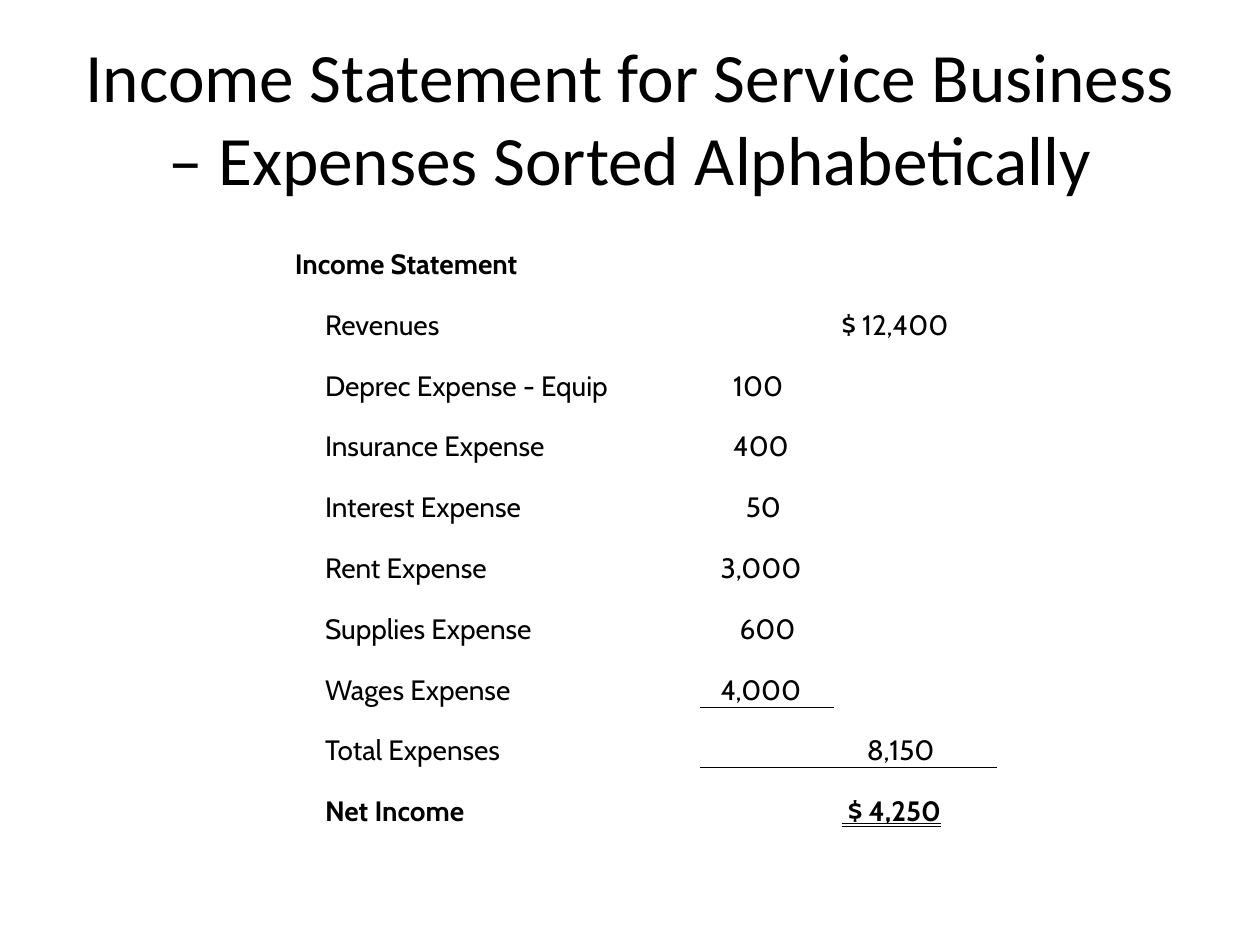
from dataclasses import dataclass

import lxml.etree
import pptx
import pptx.dml.color
import pptx.enum.text
import pptx.oxml.ns
import pptx.table
import pptx.util

COLORS = {"ink": "000000"}
SLIDE_WIDTH = pptx.util.Inches(10)
SLIDE_HEIGHT = pptx.util.Inches(7.5)
COLUMN_WIDTHS = (0.24, 2.99, 1.06, 1.29)
ROW_HEIGHT = 0.483
INSET = 0.01
INDENT_STEP = 0.05
HEADING, LABEL, DETAIL, TOTAL = range(4)
NO_STYLE = "{2D5ABB26-0587-4C30-8999-92F81FD0307C}"


@dataclass(frozen=True)
class Entry:
    label: str
    amount: str = ""
    column: int = DETAIL
    indent: int = 0
    label_column: int = LABEL
    bold: bool = False
    ruled: bool = False
    double_underline: bool = False


ENTRIES = (
    Entry("Income Statement", label_column=HEADING, bold=True),
    Entry("Revenues", "$ 12,400", TOTAL, 1),
    Entry("Deprec Expense - Equip", "100", indent=5),
    Entry("Insurance Expense", "400", indent=5),
    Entry("Interest Expense", "50", indent=7),
    Entry("Rent Expense", "3,000", indent=3),
    Entry("Supplies Expense", "600", indent=6),
    Entry("Wages Expense", "4,000", indent=3, ruled=True),
    Entry("Total Expenses", "8,150", TOTAL, 5, ruled=True),
    Entry("Net Income", " $ 4,250", TOTAL, 1, bold=True, double_underline=True),
)


def set_font(paragraph, name: str, size: float, bold: bool = False) -> None:
    paragraph.font.name = name
    paragraph.font.size = pptx.util.Pt(size)
    paragraph.font.bold = bold
    paragraph.font.color.rgb = pptx.dml.color.RGBColor.from_string(COLORS["ink"])


def write_cell(cell: pptx.table._Cell, text: str, bold: bool, indent: int = 0) -> None:
    cell.text = text
    cell.vertical_anchor = pptx.enum.text.MSO_ANCHOR.BOTTOM
    cell.margin_left = pptx.util.Inches(INSET + indent * INDENT_STEP)
    cell.margin_right = cell.margin_top = pptx.util.Inches(INSET)
    cell.margin_bottom = 0
    set_font(cell.text_frame.paragraphs[0], "Cabin", 16, bold)


def draw_border(cell: pptx.table._Cell, side: str) -> None:
    qn = pptx.oxml.ns.qn
    line = lxml.etree.Element(qn(f"a:{side}"), w=str(pptx.util.Pt(0.5)))
    fill = lxml.etree.SubElement(line, qn("a:solidFill"))
    lxml.etree.SubElement(fill, qn("a:srgbClr"), val=COLORS["ink"])
    cell._tc.get_or_add_tcPr().insert(0, line)


def add_title(slide) -> None:
    title = slide.shapes.add_textbox(
        int(SLIDE_WIDTH * 0.05), int(SLIDE_HEIGHT * 0.04),
        int(SLIDE_WIDTH * 0.9), pptx.util.Inches(1.25),
    )
    frame = title.text_frame
    frame.word_wrap = True
    frame.vertical_anchor = pptx.enum.text.MSO_ANCHOR.MIDDLE
    frame.text = "Income Statement for Service Business – Expenses Sorted Alphabetically"
    paragraph = frame.paragraphs[0]
    paragraph.alignment = pptx.enum.text.PP_ALIGN.CENTER
    set_font(paragraph, "Calibri", 39.6)


def add_statement(slide) -> None:
    table = slide.shapes.add_table(
        len(ENTRIES), len(COLUMN_WIDTHS),
        int(SLIDE_WIDTH * 0.233), pptx.util.Inches(1.75),
        pptx.util.Inches(sum(COLUMN_WIDTHS)),
        pptx.util.Inches(ROW_HEIGHT * len(ENTRIES)),
    ).table
    table.first_row = table.horz_banding = False
    table._tbl.tblPr.find(pptx.oxml.ns.qn("a:tableStyleId")).text = NO_STYLE
    for column, width in zip(table.columns, COLUMN_WIDTHS):
        column.width = pptx.util.Inches(width)
    for row in table.rows:
        row.height = pptx.util.Inches(ROW_HEIGHT)
    for cell in table.iter_cells():
        cell.fill.background()
    table.cell(0, HEADING).merge(table.cell(0, LABEL))

    for index, entry in enumerate(ENTRIES):
        write_cell(table.cell(index, entry.label_column), entry.label, entry.bold)
        if entry.amount:
            amount = table.cell(index, entry.column)
            write_cell(amount, entry.amount, entry.bold, entry.indent)
            if entry.double_underline:
                font = amount.text_frame.paragraphs[0].font
                font.underline = pptx.enum.text.MSO_UNDERLINE.DOUBLE_LINE
        if entry.ruled:
            draw_border(table.cell(index, entry.column), "lnB")
            draw_border(table.cell(index + 1, entry.column), "lnT")


def main() -> None:
    presentation = pptx.Presentation()
    presentation.slide_width = SLIDE_WIDTH
    presentation.slide_height = SLIDE_HEIGHT
    slide = presentation.slides.add_slide(presentation.slide_layouts[6])
    add_title(slide)
    add_statement(slide)
    presentation.save("out.pptx")


if __name__ == "__main__":
    main()
